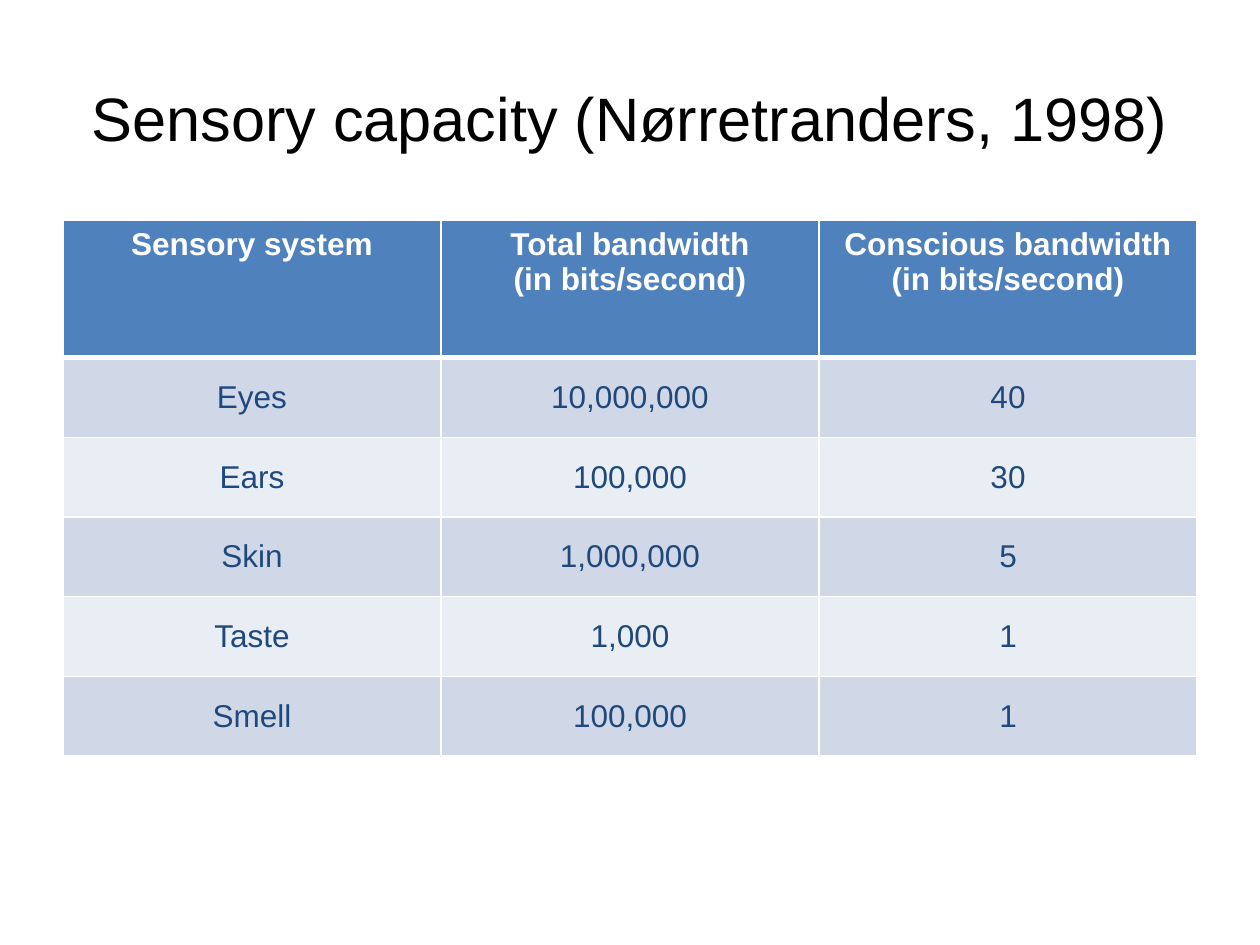
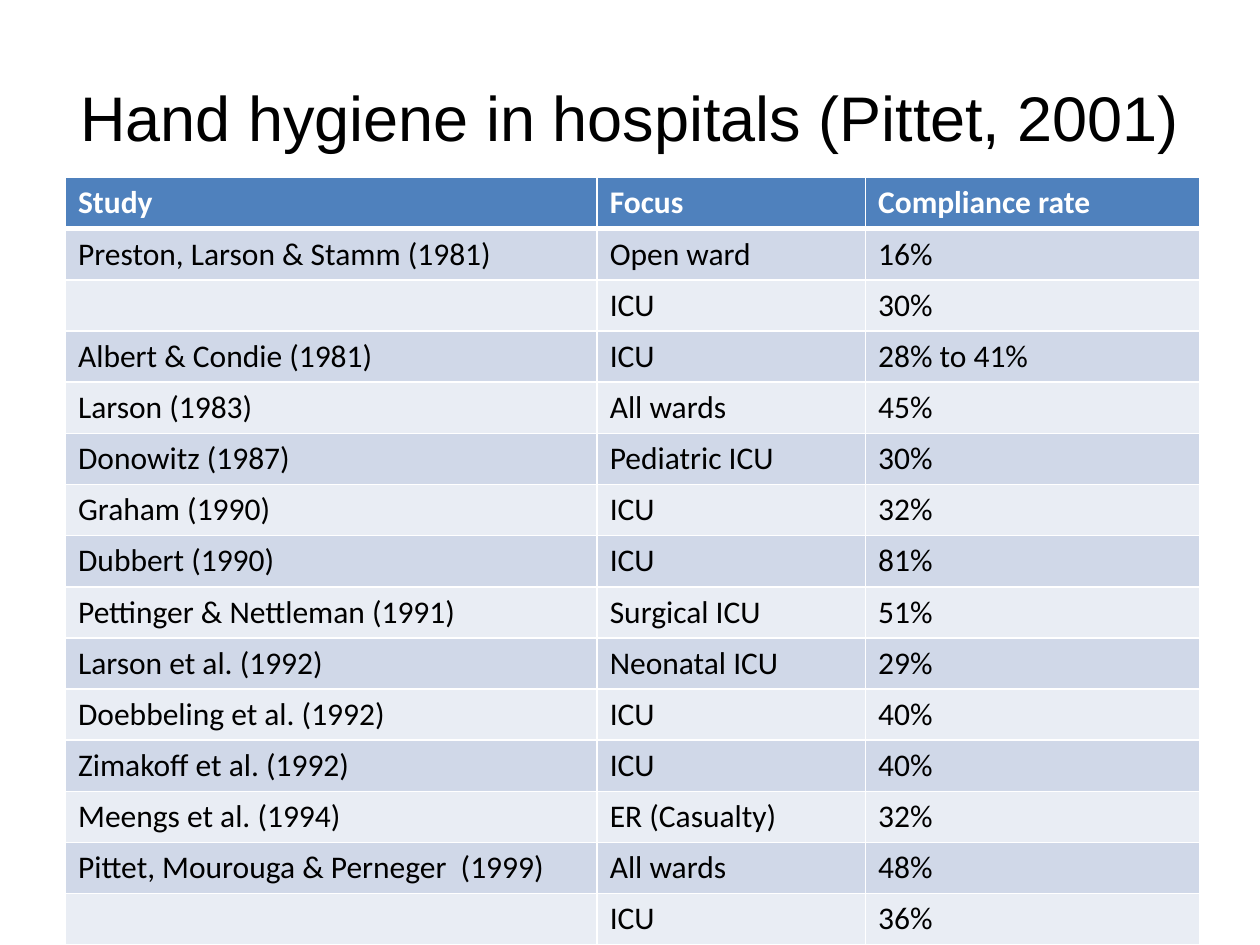
"""Build two slides of study findings, each a title above a banded table."""
from lxml import etree
from pptx import Presentation
from pptx import util as u
from pptx.dml import color
from pptx.enum import text
from pptx.oxml import ns

COLOURS = {
    "title": "000000",
    "header": "4F81BD",
    "header text": "FFFFFF",
    "border": "FFFFFF",
    "odd row": "D0D8E8",
    "even row": "E9EDF4",
    "navy": "1F497D",
    "black": "000000",
}

SENSES = [
    ("Sensory system", "Total bandwidth\n(in bits/second)", "Conscious bandwidth\n(in bits/second)"),
    ("Eyes", "10,000,000", "40"),
    ("Ears", "100,000", "30"),
    ("Skin", "1,000,000", "5"),
    ("Taste", "1,000", "1"),
    ("Smell", "100,000", "1"),
]

STUDIES = [
    ("Study", "Focus", "Compliance rate"),
    ("Preston, Larson & Stamm (1981)", "Open ward", "16%"),
    ("", "ICU", "30%"),
    ("Albert & Condie (1981)", "ICU", "28% to 41%"),
    ("Larson (1983)", "All wards", "45%"),
    ("Donowitz (1987)", "Pediatric ICU", "30%"),
    ("Graham (1990)", "ICU", "32%"),
    ("Dubbert (1990)", "ICU", "81%"),
    ("Pettinger & Nettleman (1991)", "Surgical ICU", "51%"),
    ("Larson et al. (1992)", "Neonatal ICU", "29%"),
    ("Doebbeling et al. (1992)", "ICU", "40%"),
    ("Zimakoff et al. (1992)", "ICU", "40%"),
    ("Meengs et al. (1994)", "ER (Casualty)", "32%"),
    ("Pittet, Mourouga & Perneger  (1999)", "All wards", "48%"),
    ("", "ICU", "36%"),
]


def rgb(name):
    """Return the named colour."""
    return color.RGBColor.from_string(COLOURS[name])


def format_text(frame, font, size, colour, align, bold=False):
    """Format every paragraph and run in a text frame."""
    for para in frame.paragraphs:
        para.alignment = align
        for span in para.runs:
            span.font.name = font
            span.font.size = u.Pt(size)
            span.font.bold = bold
            span.font.color.rgb = rgb(colour)


def add_title(page, words, size):
    """Add the centred slide title."""
    box = page.shapes.add_textbox(u.Inches(0.5), u.Inches(0.3), u.Inches(9), u.Inches(1.25))
    frame = box.text_frame
    frame.word_wrap = True
    frame.vertical_anchor = text.MSO_ANCHOR.MIDDLE
    frame.text = words
    format_text(frame, "Arial", size, "title", text.PP_ALIGN.CENTER)


def add_borders(cell, top, bottom):
    """Draw the cell's four borders, with top and bottom widths in points."""
    properties = cell._tc.get_or_add_tcPr()
    for side, width in (("L", 1), ("R", 1), ("T", top), ("B", bottom)):
        line = etree.SubElement(properties, ns.qn(f"a:ln{side}"), w=str(u.Pt(width)))
        fill = etree.SubElement(line, ns.qn("a:solidFill"))
        etree.SubElement(fill, ns.qn("a:srgbClr"), val=COLOURS["border"])


def add_banded_table(page, rows, left, top, widths, height, header_height,
                     font, colour, align, body_anchor):
    """Add a table with a header row and equal, alternately filled body rows."""
    frame = page.shapes.add_table(len(rows), len(widths), u.Inches(left), u.Inches(top),
                                  u.Inches(sum(widths)), u.Inches(height))
    table = frame.table
    for column, width in zip(table.columns, widths):
        column.width = u.Inches(width)
    body_height = (height - header_height) / (len(rows) - 1)
    for index, values in enumerate(rows):
        header = index == 0
        table.rows[index].height = u.Inches(header_height if header else body_height)
        band = "header" if header else "odd row" if index % 2 else "even row"
        for cell, value in zip(table.rows[index].cells, values):
            add_borders(cell, 3 if index == 1 else 1, 3 if header else 1)
            cell.fill.solid()
            cell.fill.fore_color.rgb = rgb(band)
            cell.vertical_anchor = text.MSO_ANCHOR.TOP if header else body_anchor
            cell.text_frame.text = value
            format_text(cell.text_frame, font, 18, "header text" if header else colour,
                        align, header)


def main():
    """Build and save the deck."""
    deck = Presentation()
    deck.slide_width, deck.slide_height = u.Inches(10), u.Inches(7.5)
    blank = deck.slide_layouts[6]

    page = deck.slides.add_slide(blank)
    add_title(page, "Sensory capacity (Nørretranders, 1998)", 35)
    add_banded_table(page, SENSES, 0.5, 1.75, (3, 3, 3), 4.25, 1.09, "Arial", "navy",
                     text.PP_ALIGN.CENTER, text.MSO_ANCHOR.MIDDLE)

    page = deck.slides.add_slide(blank)
    add_title(page, "Hand hygiene in hospitals (Pittet, 2001)", 36)
    add_banded_table(page, STUDIES, 0.52, 1.41, (4.22, 2.13, 2.65), 6.09, 6.09 / len(STUDIES),
                     "Calibri", "black", text.PP_ALIGN.LEFT, text.MSO_ANCHOR.TOP)

    deck.save("out.pptx")


if __name__ == "__main__":
    main()
